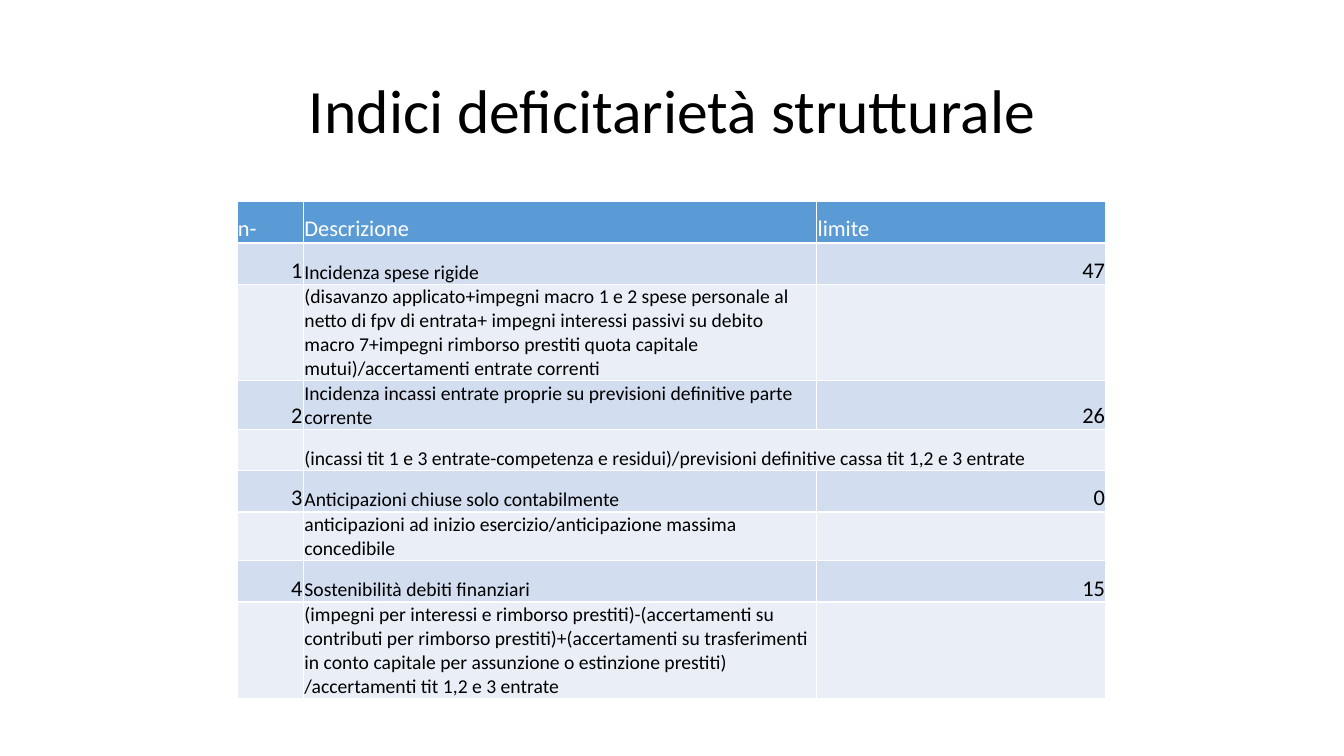
from pptx import Presentation
from pptx.dml.color import RGBColor
from pptx.enum.text import MSO_ANCHOR, MSO_AUTO_SIZE, PP_ALIGN
from pptx.util import Inches, Pt

FONT = "Calibri"
COLORS = {
    "text": "000000",
    "header_text": "FFFFFF",
    "header": "5B9BD5",
    "index_row": "D2DEEF",
    "formula_row": "EAEFF7",
}
HEADERS = ["n-", "Descrizione", "limite"]
# Each index: description, limit, formula
INDICES = [
    ("Incidenza spese rigide", "47",
     "(disavanzo applicato+impegni macro 1 e 2 spese personale al netto di fpv "
     "di entrata+ impegni interessi passivi su debito macro 7+impegni rimborso "
     "prestiti quota capitale mutui)/accertamenti entrate correnti"),
    ("Incidenza incassi entrate proprie su previsioni definitive parte corrente", "26",
     "(incassi tit 1 e 3 entrate-competenza e residui)/previsioni definitive "
     "cassa tit 1,2 e 3 entrate"),
    ("Anticipazioni chiuse solo contabilmente", "0",
     "anticipazioni ad inizio esercizio/anticipazione massima concedibile"),
    ("Sostenibilità debiti finanziari", "15",
     "(impegni per interessi e rimborso prestiti)-(accertamenti su contributi per "
     "rimborso prestiti)+(accertamenti su trasferimenti in conto capitale per "
     "assunzione o estinzione prestiti) /accertamenti tit 1,2 e 3 entrate"),
]
WIDE_FORMULA_ROW = 4
COLUMN_WIDTHS = [0.66, 5.09, 2.87]
ROW_HEIGHT = 0.41


def write_text(tf, text, size=16, color="text", align=PP_ALIGN.LEFT, spacing=None):
    p = tf.paragraphs[0]
    p.alignment = align
    p.line_spacing = spacing
    r = p.add_run()
    r.text = text
    r.font.name = FONT
    r.font.size = Pt(size)
    r.font.bold = False
    r.font.color.rgb = RGBColor.from_string(COLORS[color])


def add_title(slide, text):
    sp = slide.shapes.title
    sp.left, sp.top = Inches(0.92), Inches(0.4)
    sp.width, sp.height = Inches(11.5), Inches(1.45)
    tf = sp.text_frame
    tf.auto_size = MSO_AUTO_SIZE.NONE
    tf.vertical_anchor = MSO_ANCHOR.MIDDLE
    write_text(tf, text, size=44, align=PP_ALIGN.CENTER, spacing=0.9)


def fill_row(row, texts, fill, sizes=(16, 14, 16), color="text", number_align=PP_ALIGN.RIGHT):
    aligns = (number_align, PP_ALIGN.LEFT, number_align)
    for cell, text, size, align in zip(row.cells, texts, sizes, aligns):
        cell.fill.solid()
        cell.fill.fore_color.rgb = RGBColor.from_string(COLORS[fill])
        if text:
            cell.vertical_anchor = MSO_ANCHOR.BOTTOM
            cell.margin_left = cell.margin_right = cell.margin_top = Inches(0.01)
            cell.margin_bottom = 0
            write_text(cell.text_frame, text, size=size, color=color, align=align)


def add_index_table(slide):
    count = 1 + 2 * len(INDICES)
    frame = slide.shapes.add_table(
        count, len(HEADERS), Inches(2.35), Inches(2),
        Inches(sum(COLUMN_WIDTHS)), Inches(ROW_HEIGHT * count))
    table = frame.table
    for column, width in zip(table.columns, COLUMN_WIDTHS):
        column.width = Inches(width)
    for row in table.rows:
        row.height = Inches(ROW_HEIGHT)

    # Header, then an index row and a formula row for each index
    fill_row(table.rows[0], HEADERS, "header", sizes=(16, 16, 16),
             color="header_text", number_align=PP_ALIGN.LEFT)
    for n, (description, limit, formula) in enumerate(INDICES, start=1):
        fill_row(table.rows[2 * n - 1], (str(n), description, limit), "index_row")
        fill_row(table.rows[2 * n], ("", formula, ""), "formula_row")
    table.cell(WIDE_FORMULA_ROW, 1).merge(table.cell(WIDE_FORMULA_ROW, 2))


def main():
    prs = Presentation()
    prs.slide_width, prs.slide_height = Inches(13.33), Inches(7.5)
    slide = prs.slides.add_slide(prs.slide_layouts[5])
    add_title(slide, "Indici deficitarietà strutturale")
    add_index_table(slide)
    prs.save("out.pptx")


if __name__ == "__main__":
    main()
